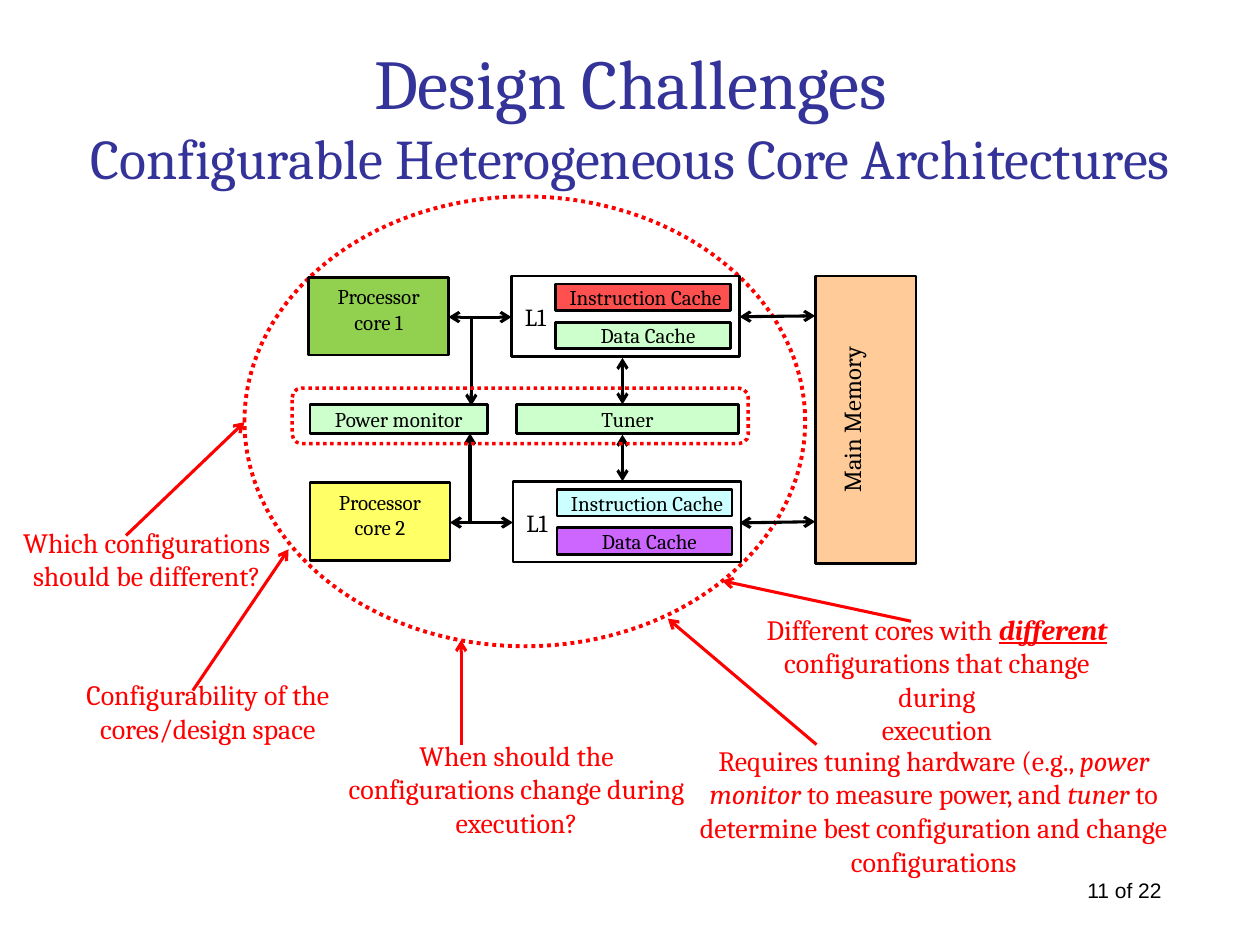
from dataclasses import dataclass
from typing import Any, NamedTuple

from lxml.etree import SubElement
from pptx import Presentation
from pptx.dml.color import RGBColor
from pptx.enum.dml import MSO_LINE
from pptx.enum.shapes import MSO_CONNECTOR, MSO_SHAPE
from pptx.enum.text import MSO_ANCHOR, PP_ALIGN
from pptx.oxml.ns import qn
from pptx.util import Pt

COLORS = {
    "black": "000000", "red": "FF0000", "title": "333399", "mint": "CCFFCC",
    "peach": "FFCC99", "green": "92D050", "yellow": "FFFF66",
    "coral": "FF5050", "cyan": "CCFFFF", "purple": "CC66FF",
}
SERIF = "Cambria"


class Box(NamedTuple):
    left: float
    top: float
    width: float
    height: float

    def moved(self, right: float, down: float) -> "Box":
        return Box(self.left + right, self.top + down, self.width, self.height)


class Insets(NamedTuple):
    left: float = 7.2
    top: float = 3.6
    right: float = 7.2
    bottom: float = 3.6


class Run(NamedTuple):
    text: str
    italic: bool = False
    strong: bool = False


class Arrow(NamedTuple):
    start: tuple[float, float]
    end: tuple[float, float]
    double: bool = False


@dataclass
class Core:
    number: int
    right: float
    down: float
    processor_color: str
    instruction_color: str
    data_color: str


@dataclass
class Note:
    box: Box
    paragraphs: list[list[Run]]
    insets: Insets = Insets()


CORES = [
    Core(1, 0, 0, "green", "coral", "mint"),
    Core(2, 0.8, 117.4, "yellow", "cyan", "purple"),
]

BUS_ARROWS = [
    Arrow((355.7, 204.5), (355.7, 231.1), True),
    Arrow((355.7, 248.4), (355.7, 275), True),
    Arrow((422.6, 181), (465.8, 180.5), True),
    Arrow((422.6, 298.8), (465.8, 298.1), True),
    Arrow((269.3, 180.7), (269.3, 231.8)),
    Arrow((268.6, 298.1), (268.6, 247.7)),
]

NOTE_ARROWS = [
    Arrow((520.6, 355), (412.6, 331.9)),
    Arrow((263.5, 425.5), (263.5, 365.8)),
    Arrow((110.2, 394.6), (164.9, 313.9)),
    Arrow((466.6, 425.5), (381.6, 353.5)),
    Arrow((72, 306), (139.7, 241.2)),
]

NOTES = [
    Note(Box(430.6, 346.3, 232.6, 65.5), [
        [Run("Different cores with "), Run("different", True, True)],
        [Run("configurations that change during")],
        [Run("execution")],
    ], Insets(left=0, right=23)),
    Note(Box(190.8, 418.3, 208.8, 65.5), [
        [Run("When should the configurations change during execution?")],
    ]),
    Note(Box(14.4, 383.8, 208.8, 46.1), [
        [Run("Configurability of the cores/design space")],
    ]),
    Note(Box(391, 421.2, 285.1, 85), [[
        Run("Requires tuning hardware (e.g., "),
        Run("power monitor", True),
        Run(" to measure power, and "),
        Run("tuner", True),
        Run(" to determine best configuration and change configurations"),
    ]]),
    Note(Box(0, 296.6, 167.8, 46.1), [
        [Run("Which configurations")],
        [Run("should be different?")],
    ]),
]


def color(name: str) -> RGBColor:
    return RGBColor.from_string(COLORS[name])


def write(shape: Any, paragraphs: list[list[Run]], size: float,
          ink: str = "black", font: str = SERIF, wrap: bool = True,
          anchor: MSO_ANCHOR = MSO_ANCHOR.TOP, insets: Insets = Insets()) -> None:
    frame = shape.text_frame
    frame.word_wrap = wrap
    frame.vertical_anchor = anchor
    frame.margin_left, frame.margin_top, frame.margin_right, frame.margin_bottom = map(Pt, insets)
    for index, runs in enumerate(paragraphs):
        paragraph = frame.add_paragraph() if index else frame.paragraphs[0]
        paragraph.alignment = PP_ALIGN.CENTER
        paragraph.font.name = font
        paragraph.font.size = Pt(size)
        paragraph.font.color.rgb = color(ink)
        for item in runs:
            run = paragraph.add_run()
            run.text = item.text
            if item.italic:
                run.font.italic = True
            if item.strong:
                run.font.bold = True
                run.font.underline = True


def add_text(shapes: Any, box: Box, paragraphs: list[list[Run]], size: float, **style: Any) -> Any:
    shape = shapes.add_textbox(*map(Pt, box))
    write(shape, paragraphs, size, **style)
    return shape


def add_outline(shapes: Any, box: Box, kind: MSO_SHAPE = MSO_SHAPE.RECTANGLE,
                ink: str = "black", weight: float = 1.5, dotted: bool = False) -> Any:
    shape = shapes.add_shape(kind, *map(Pt, box))
    shape.shadow.inherit = False
    shape.fill.background()
    shape.line.color.rgb = color(ink)
    shape.line.width = Pt(weight)
    if dotted:
        shape.line.dash_style = MSO_LINE.ROUND_DOT
    return shape


def add_block(shapes: Any, box: Box, fill: str, lines: list[str], size: float = 12,
              insets: Insets = Insets()) -> Any:
    shape = add_outline(shapes, box)
    shape.fill.solid()
    shape.fill.fore_color.rgb = color(fill)
    write(shape, [[Run(line)] for line in lines], size, wrap=False,
          anchor=MSO_ANCHOR.MIDDLE, insets=insets)
    return shape


def add_arrow(shapes: Any, arrow: Arrow, ink: str = "black") -> None:
    connector = shapes.add_connector(MSO_CONNECTOR.STRAIGHT, *map(Pt, arrow.start + arrow.end))
    connector.line.color.rgb = color(ink)
    connector.line.width = Pt(1.75)
    line = connector.line._get_or_add_ln()
    for tag in ["a:headEnd", "a:tailEnd"] if arrow.double else ["a:tailEnd"]:
        SubElement(line, qn(tag), type="arrow")
    SubElement(connector._element.spPr, qn("a:effectLst"))


def add_core(slide: Any, core: Core) -> None:
    shapes = slide.shapes.add_group_shape().shapes
    shift = (core.right, core.down)
    add_block(shapes, Box(176.4, 158.4, 79.9, 44.6).moved(*shift), core.processor_color,
              ["Processor", f"core {core.number}"], insets=Insets(bottom=11.6))
    height = 181.2 + core.down
    add_arrow(shapes, Arrow((292.3 + core.right, height), (256.3 + core.right, height), True))
    add_block(shapes, Box(317.5, 184.2, 100.1, 15.1).moved(*shift), core.data_color,
              ["Data Cache"], insets=Insets(left=12.5))
    add_block(shapes, Box(317.5, 162.3, 100.1, 15.1).moved(*shift), core.instruction_color,
              ["Instruction Cache"], insets=Insets(left=9.8))
    add_outline(shapes, Box(292.3, 157.7, 130.3, 46.1).moved(*shift))
    add_text(shapes, Box(290.9, 169.2, 30.2, 24.5).moved(*shift), [[Run("L1")]], 14, wrap=False)


def main() -> None:
    presentation = Presentation()
    presentation.slide_width, presentation.slide_height = Pt(720), Pt(540)
    slide = presentation.slides.add_slide(presentation.slide_layouts[6])
    shapes = slide.shapes

    add_text(shapes, Box(596.9, 498.2, 91.4, 21.6), [[Run("11 of 22")]], 12, font="Arial")
    add_outline(shapes, Box(139.7, 112.3, 320.4, 257), MSO_SHAPE.OVAL, "red", 2.25, True)
    memory = add_block(shapes, Box(412.6, 211, 164.2, 57.6), "peach", ["Main Memory"], 14,
                       Insets(bottom=20))
    memory.rotation = 270
    for core in CORES:
        add_core(slide, core)
    add_block(shapes, Box(295.2, 231.1, 126.7, 16.6), "mint", ["Tuner"])
    add_block(shapes, Box(177.1, 231.1, 101.5, 16.6), "mint", ["Power monitor"])
    for arrow in BUS_ARROWS:
        add_arrow(shapes, arrow)
    add_outline(shapes, Box(167, 221.8, 260.6, 31.7), MSO_SHAPE.ROUNDED_RECTANGLE, "red", 2, True)
    for arrow in NOTE_ARROWS:
        add_arrow(shapes, arrow, "red")
    for note in NOTES:
        add_text(shapes, note.box, note.paragraphs, 16, ink="red", insets=note.insets)
    title = add_text(shapes, Box(13.7, 46.1, 693.4, 38.9),
                     [[Run("Design Challenges\vConfigurable Heterogeneous Core Architectures")]],
                     32, ink="title", anchor=MSO_ANCHOR.MIDDLE)
    title.text_frame.paragraphs[0].runs[0].text = "Design Challenges"
    heading = title.text_frame.paragraphs[0]
    heading.runs[0].font.size = Pt(40)
    heading.add_line_break()
    heading.add_run().text = "Configurable Heterogeneous Core Architectures"
    presentation.save("out.pptx")


if __name__ == "__main__":
    main()
